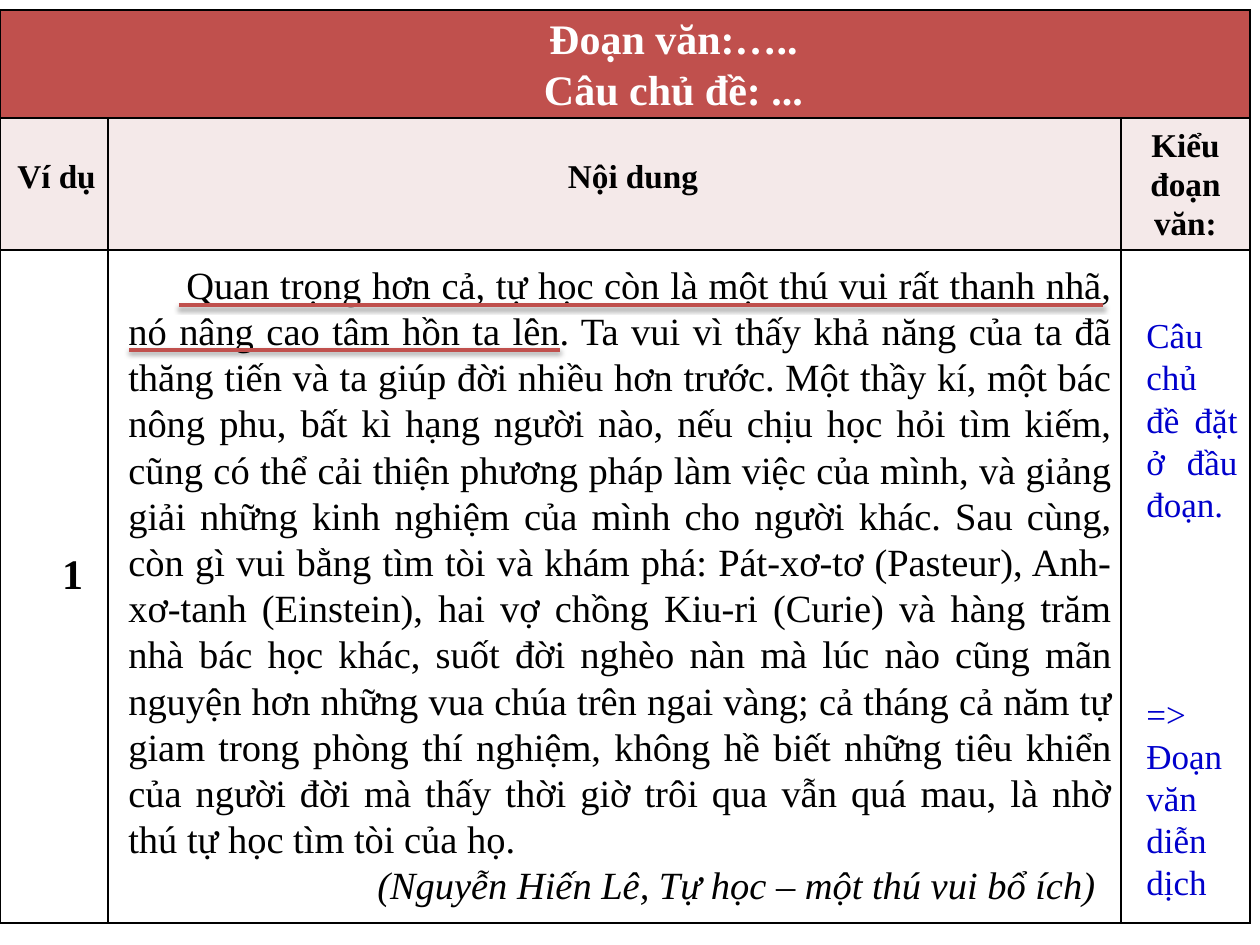
from lxml import etree
from pptx import Presentation, util as u
from pptx.dml.color import RGBColor
from pptx.enum import shapes, text
from pptx.oxml import parse_xml
from pptx.oxml.ns import nsdecls, qn

PX = 7257  # EMU in one px, at 126 px to the inch
THEME = {
    "font": "Times New Roman",
    "red": "C0504D", "pale": "F4E9E9", "white": "FFFFFF",
    "black": "000000", "blue": "0000CC",
    "title": 24, "head": 19, "body": 22, "side": 20,
}
MID, JUST, LEFT = text.PP_ALIGN.CENTER, text.PP_ALIGN.JUSTIFY, text.PP_ALIGN.LEFT


def write(frame, items, size, color, **look):
    """Fill a text frame; each item is (text, paragraph format, left px, first-line px)."""
    for i, (words, form, left, first) in enumerate(items):
        para = frame.paragraphs[0] if i == 0 else frame.add_paragraph()
        for key, val in form.items():
            setattr(para, key, val)
        props = para._p.get_or_add_pPr()
        props.set("marL", str(left * PX))
        props.set("indent", str(first * PX))
        run = para.add_run()
        run.text = words
        run.font.name, run.font.size = THEME["font"], u.Pt(THEME[size])
        run.font.color.rgb = RGBColor.from_string(THEME[color])
        for key, val in look.items():
            setattr(run.font, key, val)


def edge(cell):
    """Draw a thin black border on all four sides of a cell."""
    props = cell._tc.get_or_add_tcPr()
    for i, side in enumerate(("lnL", "lnR", "lnT", "lnB")):
        props.insert(i, parse_xml(
            f'<a:{side} {nsdecls("a")} w="12700"><a:solidFill>'
            f'<a:srgbClr val="{THEME["black"]}"/></a:solidFill></a:{side}>'))


deck = Presentation()
deck.slide_width, deck.slide_height = u.Inches(10), u.Inches(7.5)
slide = deck.slides.add_slide(deck.slide_layouts[6])

# Table
cols, rows = (108, 1013, 129), (108, 132, 673)
grid = slide.shapes.add_table(
    3, 3, 0, 10 * PX, sum(cols) * PX, sum(rows) * PX).table
for col, wide in zip(grid.columns, cols):
    col.width = wide * PX
for row, high in zip(grid.rows, rows):
    row.height = high * PX
for row, fill in zip(grid.rows, ("red", "pale", "white")):
    for cell in row.cells:
        for key, val in {"margin_left": 4, "margin_right": 4,
                         "margin_top": 0, "margin_bottom": 0}.items():
            setattr(cell, key, val * PX)
        cell.vertical_anchor = text.MSO_ANCHOR.MIDDLE
        cell.fill.solid()
        cell.fill.fore_color.rgb = RGBColor.from_string(THEME[fill])
        edge(cell)
grid.cell(0, 0).merge(grid.cell(0, 2))

tight = {"alignment": MID, "line_spacing": u.Pt(13.8)}
loose = {"alignment": MID, "line_spacing": 1.07}
top = {**loose, "space_before": u.Pt(0.4)}
for r, c, size, color, items in (
    (0, 0, "title", "white", [("Đoạn văn:…..", top, 97, 0),
                              ("Câu chủ đề: ...", top, 97, 0)]),
    (1, 0, "head", "black", [("Ví dụ", tight, 0, 5)]),
    (1, 1, "head", "black", [("Nội dung", tight, 37, 0)]),
    (1, 2, "head", "black", [("Kiểu đoạn văn:", loose, 0, 0)]),
    (2, 0, "title", "black", [("1", tight, 37, 0)]),
):
    write(grid.cell(r, c).text_frame, items, size, color, bold=True)

# Passage and its source
box = slide.shapes.add_textbox(116 * PX, 249 * PX, 1008 * PX, 670 * PX)
body = box.text_frame
body.word_wrap, body.margin_top = True, 12 * PX
pitch = u.Pt(26.4)
write(body, [
    ("Quan trọng hơn cả, tự học còn là một thú vui rất thanh nhã, nó nâng cao "
     "tâm hồn ta lên. Ta vui vì thấy khả năng của ta đã thăng tiến và ta giúp "
     "đời nhiều hơn trước. Một thầy kí, một bác nông phu, bất kì hạng người "
     "nào, nếu chịu học hỏi tìm kiếm, cũng có thể cải thiện phương pháp làm "
     "việc của mình, và giảng giải những kinh nghiệm của mình cho người khác. "
     "Sau cùng, còn gì vui bằng tìm tòi và khám phá: Pát-xơ-tơ (Pasteur), "
     "Anh-xơ-tanh (Einstein), hai vợ chồng Kiu-ri (Curie) và hàng trăm nhà bác "
     "học khác, suốt đời nghèo nàn mà lúc nào cũng mãn nguyện hơn những vua "
     "chúa trên ngai vàng; cả tháng cả năm tự giam trong phòng thí nghiệm, "
     "không hề biết những tiêu khiển của người đời mà thấy thời giờ trôi qua "
     "vẫn quá mau, là nhờ thú tự học tìm tòi của họ.",
     {"alignment": JUST, "line_spacing": pitch}, 0, 58),
    ("(Nguyễn Hiến Lê, Tự học – một thú vui bổ ích)",
     {"alignment": LEFT, "line_spacing": pitch}, 249, 0),
], "body", "black")
body.paragraphs[1].runs[0].font.italic = True

# Underlines of the topic sentence
for start, end, y in ((179, 1103, 305), (129, 560, 350)):
    line = slide.shapes.add_connector(
        shapes.MSO_CONNECTOR.STRAIGHT, start * PX, y * PX, end * PX, y * PX)
    line.line.color.rgb = RGBColor.from_string(THEME["red"])
    line.line.width = u.Pt(2)
    glow = etree.SubElement(line._element.spPr, qn("a:effectLst"))
    glow.append(parse_xml(
        f'<a:outerShdw {nsdecls("a")} blurRad="39370" dist="20320" dir="5400000" '
        f'rotWithShape="0"><a:srgbClr val="{THEME["black"]}">'
        '<a:alpha val="38000"/></a:srgbClr></a:outerShdw>'))

# Kind of paragraph
box = slide.shapes.add_textbox(1134 * PX, 307 * PX, 116 * PX, 606 * PX)
note = box.text_frame
note.word_wrap, note.margin_top = True, 7 * PX
plain = {"alignment": JUST, "line_spacing": u.Pt(24)}
write(note, [
    ("Câu chủ đề đặt ở đầu đoạn.", plain, 0, 0),
    ("=> Đoạn văn diễn dịch", {**plain, "space_before": u.Pt(96)}, 0, 0),
], "side", "blue")

deck.save("out.pptx")
